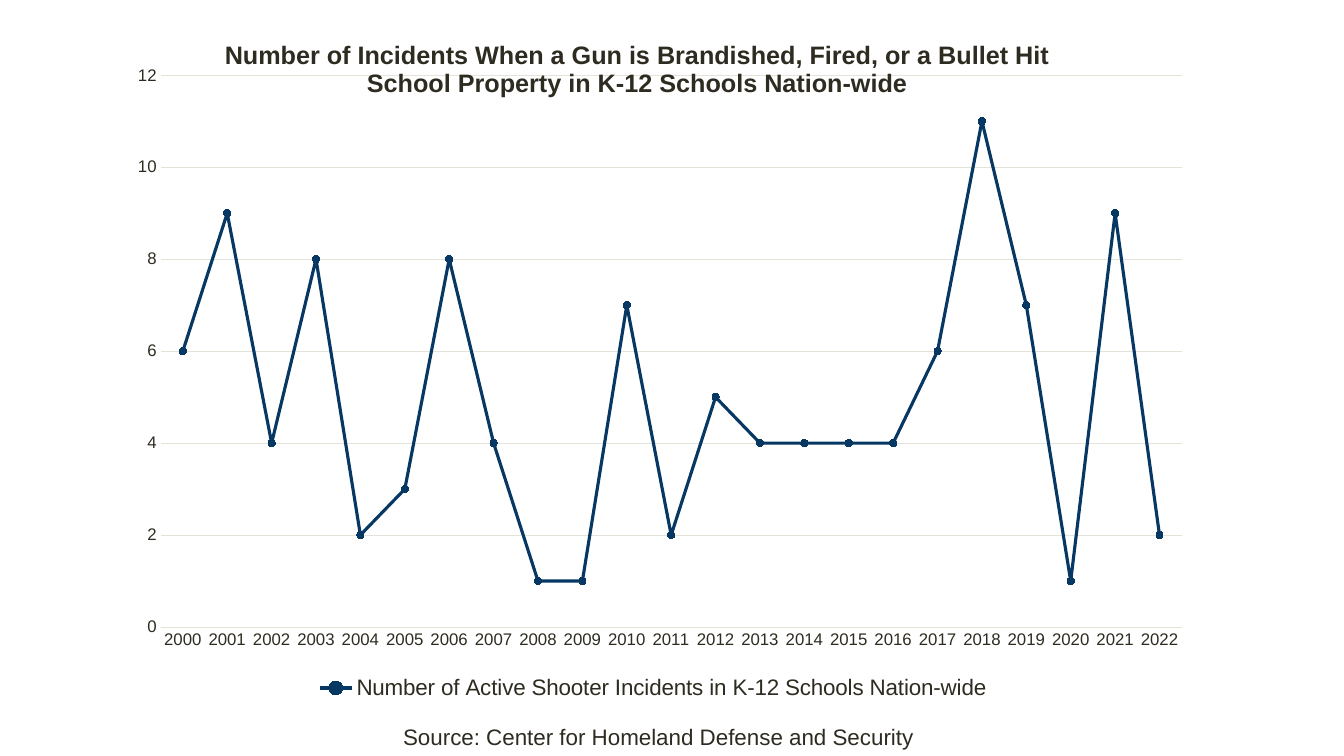
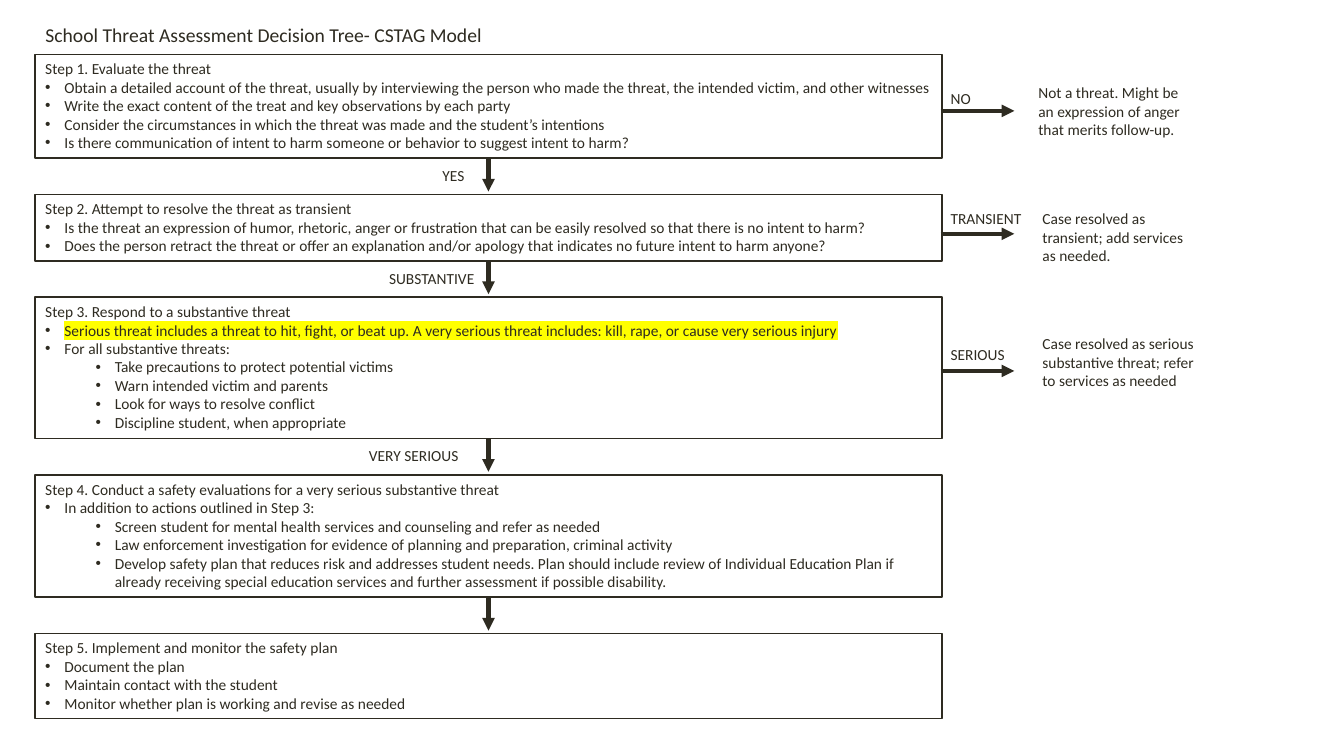
"""Build a chart of school incidents and a threat assessment decision tree."""
from lxml import etree
from pptx import Presentation
from pptx.chart.data import CategoryChartData as ChartData
from pptx.dml.color import RGBColor as RGB
from pptx.enum.chart import XL_CHART_TYPE as Chart, XL_LEGEND_POSITION as Legend
from pptx.enum.chart import XL_MARKER_STYLE as Marker, XL_TICK_MARK as Tick
from pptx.enum.shapes import MSO_CONNECTOR as Link, MSO_SHAPE as Shape
from pptx.enum.text import MSO_ANCHOR as Anchor, MSO_AUTO_SIZE as Fit, PP_ALIGN as Align
from pptx.oxml.ns import qn
from pptx.util import Inches, Pt

COLORS = {"ink": "2E2B21", "paper": "FFFFFF", "grid": "E4E2D9", "navy": "073763", "mark": "FFFF00"}
FRAME = {"word_wrap": True, "auto_size": Fit.SHAPE_TO_FIT_TEXT, "vertical_anchor": Anchor.TOP}

HEAD = ("Number of Incidents When a Gun is Brandished, Fired, or a Bullet Hit "
        "School Property in K-12 Schools Nation-wide")
SERIES = "Number of Active Shooter Incidents in K-12 Schools Nation-wide"
SOURCE = "Source: Center for Homeland Defense and Security"
COUNTS = [6, 9, 4, 8, 2, 3, 8, 4, 1, 1, 7, 2, 5, 4, 4, 4, 4, 6, 11, 7, 1, 9, 2]
YEARS = [str(2000 + n) for n in range(len(COUNTS))]

TREE = "School Threat Assessment Decision Tree- CSTAG Model"
KEY = ("Serious threat includes a threat to hit, fight, or beat up. "
       "A very serious threat includes: kill, rape, or cause very serious injury")
STEPS = [
    {"title": "Step 1. Evaluate the threat", "lines": 5, "next": ("YES", 4.29),
     "items": [
         (0, "Obtain a detailed account of the threat, usually by interviewing the person who made "
             "the threat, the intended victim, and other witnesses"),
         (0, "Write the exact content of the treat and key observations by each party"),
         (0, "Consider the circumstances in which the threat was made and the student’s intentions"),
         (0, "Is there communication of intent to harm someone or behavior to suggest intent to harm?")]},
    {"title": "Step 2. Attempt to resolve the threat as transient", "lines": 3,
     "next": ("SUBSTANTIVE", 3.76),
     "items": [
         (0, "Is the threat an expression of humor, rhetoric, anger or frustration that can be easily "
             "resolved so that there is no intent to harm?"),
         (0, "Does the person retract the threat or offer an explanation and/or apology that indicates "
             "no future intent to harm anyone?")]},
    {"title": "Step 3. Respond to a substantive threat", "lines": 7, "next": ("VERY SERIOUS", 3.56),
     "items": [
         (0, KEY),
         (0, "For all substantive threats:"),
         (1, "Take precautions to protect potential victims"),
         (1, "Warn intended victim and parents"),
         (1, "Look for ways to resolve conflict"),
         (1, "Discipline student, when appropriate")]},
    {"title": "Step 4. Conduct a safety evaluations for a very serious substantive threat", "lines": 6,
     "next": None,
     "items": [
         (0, "In addition to actions outlined in Step 3:"),
         (1, "Screen student for mental health services and counseling and refer as needed"),
         (1, "Law enforcement investigation for evidence of planning and preparation, criminal activity"),
         (1, "Develop safety plan that reduces risk and addresses student needs. Plan should include "
             "review of Individual Education Plan if already receiving special education services and "
             "further assessment if possible disability.")]},
    {"title": "Step 5. Implement and monitor the safety plan", "lines": 4, "next": None,
     "items": [
         (0, "Document the plan"),
         (0, "Maintain contact with the student"),
         (0, "Monitor whether plan is working and revise as needed")]},
]
EXITS = [
    ("NO", 0.83, 1.1, (10.2, 0.78), "Not a threat. Might be an expression of anger that merits follow-up."),
    ("TRANSIENT", 2.03, 2.32, (10.24, 2.03), "Case resolved as transient; add services as needed."),
    ("SERIOUS", 3.37, 3.68, (10.24, 3.27),
     "Case resolved as serious substantive threat; refer to services as needed"),
]
LEFT, WIDE, TOP, GAP, LINE, PAD = 0.35, 8.99, 0.54, 0.36, 0.186, 0.1
RIGHT, MID = 9.33, LEFT + WIDE / 2


def hue(name):
    return RGB.from_string(COLORS[name])


def style(font, size, face, bold=False):
    for key, value in {"size": Pt(size), "name": face, "bold": bold}.items():
        setattr(font, key, value)
    font.color.rgb = hue("ink")


def stroke(line, name, width):
    line.color.rgb = hue(name)
    line.width = Pt(width)


def child(parent, tag, **attrs):
    return etree.SubElement(parent, qn(tag), attrs)


def setup(frame):
    for key, value in FRAME.items():
        setattr(frame, key, value)


def write(para, text, size=11, face="Calibri"):
    para.alignment = Align.LEFT
    run = para.add_run()
    run.text = text
    style(run.font, size, face)
    return run


def label(slide, text, left, top, width, height=0.29, size=11, face="Calibri"):
    box = slide.shapes.add_textbox(*map(Inches, (left, top, width, height)))
    setup(box.text_frame)
    write(box.text_frame.paragraphs[0], text, size, face)


def arrow(slide, start, end):
    link = slide.shapes.add_connector(Link.STRAIGHT, *map(Inches, start + end))
    stroke(link.line, "ink", 3)
    child(link.line._get_or_add_ln(), "a:tailEnd", type="triangle")
    child(link.element.spPr, "a:effectLst")
    return link


def bullet(para, level, text):
    para.level = level
    props = para._p.get_or_add_pPr()
    props.set("marL", str(Inches(0.19 + level / 2)))
    props.set("indent", str(-Inches(0.19)))
    child(props, "a:buFont", typeface="Arial")
    child(props, "a:buChar", char="•")
    run = write(para, text)
    if text == KEY:
        glow = etree.Element(qn("a:highlight"))
        child(glow, "a:srgbClr", val=COLORS["mark"])
        run.font._element.find(qn("a:solidFill")).addnext(glow)


def card(slide, step, top, height):
    box = slide.shapes.add_shape(Shape.RECTANGLE, *map(Inches, (LEFT, top, WIDE, height)))
    box.shadow.inherit = False
    box.fill.solid()
    box.fill.fore_color.rgb = hue("paper")
    stroke(box.line, "ink", 1.25)
    frame = box.text_frame
    setup(frame)
    write(frame.paragraphs[0], step["title"])
    for level, text in step["items"]:
        bullet(frame.add_paragraph(), level, text)
    return box


def place(parent, index, **spots):
    for old in parent.findall(qn("c:layout")):
        parent.remove(old)
    outer = etree.Element(qn("c:layout"))
    parent.insert(index, outer)
    inner = child(outer, "c:manualLayout")
    for key, value in spots.items():
        child(inner, f"c:{key}", val=str(value))


def trend(slide):
    label(slide, SOURCE, 3.9, 7.12, 5.53, 0.37, 16, "Arial")
    data = ChartData()
    data.categories = YEARS
    data.add_series(SERIES, COUNTS)
    area = map(Inches, (1.11, 0.13, 10.74, 6.86))
    chart = slide.shapes.add_chart(Chart.LINE_MARKERS, *area, data).chart
    style(chart.font, 10, "Arial")

    chart.has_title = True
    head = chart.chart_title.text_frame.paragraphs[0].add_run()
    head.text = HEAD
    style(head.font, 18, "Arial", True)
    place(chart.chart_title.element, 1, xMode="edge", yMode="edge", x=0.1, y=0.03)
    plot = chart.element.find(".//" + qn("c:plotArea"))
    place(plot, 0, layoutTarget="inner", xMode="edge", yMode="edge", x=0.045, y=0.09, w=0.943, h=0.798)

    chart.has_legend = True
    chart.legend.position = Legend.BOTTOM
    chart.legend.include_in_layout = False
    style(chart.legend.font, 16, "Arial")

    years, scale = chart.category_axis, chart.value_axis
    for axis in (years, scale):
        axis.major_tick_mark = axis.minor_tick_mark = Tick.NONE
        style(axis.tick_labels.font, 12, "Arial")
    stroke(years.format.line, "grid", 0.75)
    scale.format.line.fill.background()
    stroke(scale.major_gridlines.format.line, "grid", 0.75)
    for key, value in {"minimum_scale": 0, "maximum_scale": 12, "major_unit": 2}.items():
        setattr(scale, key, value)

    chart.plots[0].vary_by_categories = False
    series = chart.plots[0].series[0]
    series.smooth = False
    stroke(series.format.line, "navy", 2.25)
    dot = series.marker
    dot.style, dot.size = Marker.CIRCLE, 5
    dot.format.fill.solid()
    dot.format.fill.fore_color.rgb = hue("navy")
    stroke(dot.format.line, "navy", 0.75)


def tree(slide):
    title = slide.shapes.title
    title.left, title.top, title.width, title.height = map(Inches, (LEFT, 0.18, 6.32, 0.34))
    setup(title.text_frame)
    write(title.text_frame.paragraphs[0], TREE, 14)

    top = TOP
    for step in STEPS:
        height = PAD + LINE * step["lines"]
        box = card(slide, step, top, height)
        base = top + height
        if step is not STEPS[-1]:
            arrow(slide, (MID, base), (MID, base + GAP - 0.03)).begin_connect(box, 2)
        if step["next"]:
            text, left = step["next"]
            label(slide, text, left, base + 0.03, 5.01 - left)
        top = base + GAP

    for text, high, level, spot, note in EXITS:
        label(slide, text, RIGHT, high, 1.14)
        arrow(slide, (RIGHT, level), (10.06, level))
        label(slide, note, *spot, 1.75, 0.66)


def main():
    deck = Presentation()
    deck.slide_width, deck.slide_height = Inches(13.33), Inches(7.5)
    for index, build in ((6, trend), (5, tree)):
        build(deck.slides.add_slide(deck.slide_layouts[index]))
    deck.save("out.pptx")


if __name__ == "__main__":
    main()
